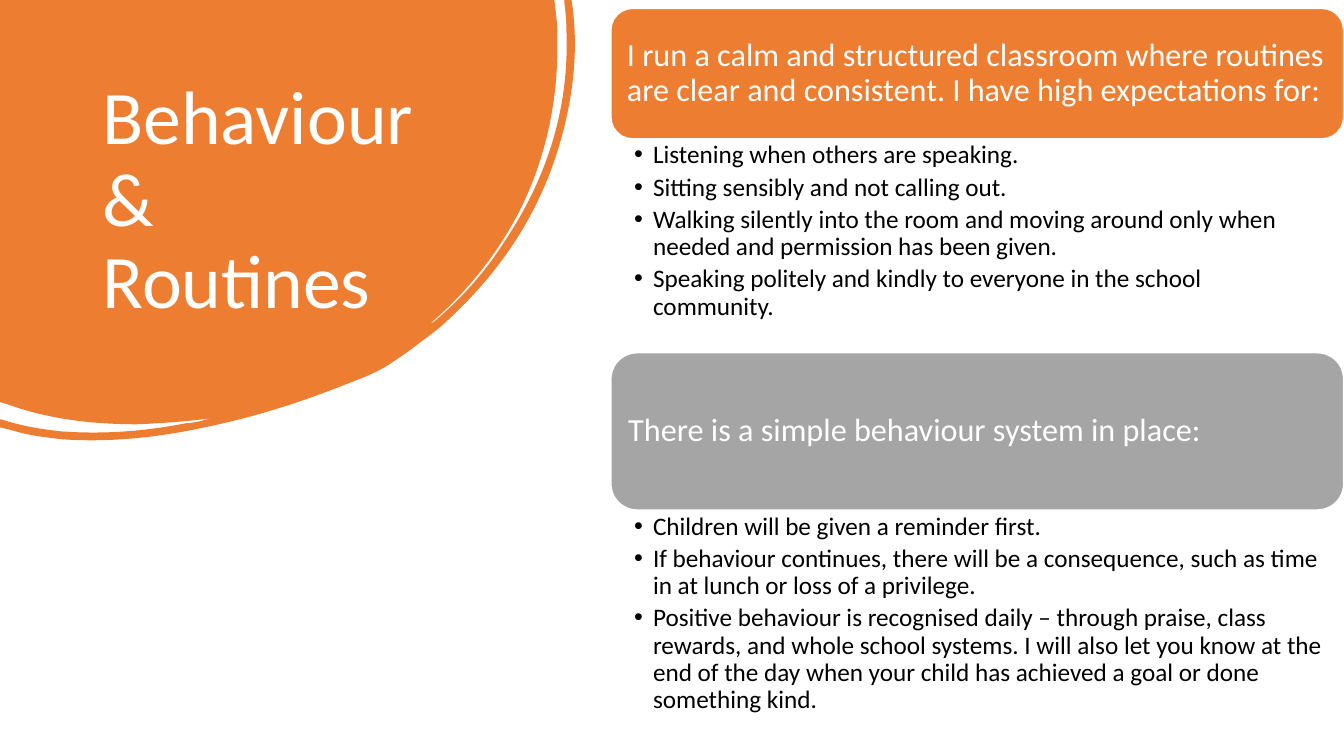
from lxml import etree
from pptx import Presentation, util as u
from pptx.dml.color import RGBColor
from pptx.enum import shapes, text
from pptx.oxml import ns

COLORS = {"orange": "ED7D31", "gray": "A5A5A5", "white": "FFFFFF", "black": "000000"}
FONT = "Calibri"

presentation = Presentation()
presentation.slide_width, presentation.slide_height = u.Pt(960), u.Pt(540)
slide = presentation.slides.add_slide(presentation.slide_layouts[6])


def add_text(box, lines, size, color, insets, anchor, space_after=0):
    left, top, width, height = map(u.Pt, box)
    shape = slide.shapes.add_textbox(left, top, width, height)
    frame = shape.text_frame
    frame.word_wrap = True
    frame.vertical_anchor = anchor
    frame.margin_left, frame.margin_top, frame.margin_right, frame.margin_bottom = map(u.Pt, insets)
    frame.text = "\n".join(lines)
    for paragraph in frame.paragraphs:
        paragraph.line_spacing = 0.9
        paragraph.space_after = u.Pt(space_after)
        font = paragraph.runs[0].font
        font.name, font.size = FONT, u.Pt(size)
        font.color.rgb = RGBColor.from_string(COLORS[color])
    return frame


blob_segments = [
    (396, 0), (397.4, 12.2),
    (398.2, 18.7, 398.2, 25.9, 398.2, 32.4),
    (398.2, 72.7, 390.2, 110.9, 373, 146.9),
    (357.1, 179.3, 334.8, 207.4, 307.4, 231.1),
    (308.9, 231.1, 309.6, 229.7, 311, 229),
    (330.5, 212.4, 347, 193.7, 360.7, 172.1),
    (391, 126.7, 406.8, 77, 404.6, 21.6),
    (404.6, 15.1, 403.9, 8.6, 403.2, 2.2),
    (403.2, 0), (408.2, 0), (409, 5),
    (413.3, 38.9, 409, 73.4, 398.2, 108),
    (383.8, 154.1, 357.8, 193, 322.6, 226.1),
    (316.1, 232.6, 308.9, 238.3, 301.7, 243.4),
    (294.5, 249.1, 287.3, 254.2, 278.6, 259.9),
    (270, 265.7, 259.2, 270, 247.7, 274.3),
    (215.3, 287.3, 181.4, 298.1, 146.2, 305.3),
    (113, 312.5, 79.2, 316.1, 45.4, 313.9),
    (32.4, 312.5, 20.2, 311, 8.6, 307.4),
    (0, 305.3), (0, 299.5), (2.9, 300.2),
    (16.6, 304.6, 30.2, 306.7, 43.9, 308.2),
    (74.2, 310.3, 103, 308.2, 132.5, 302.4),
    (136.1, 302.4, 139, 301.7, 142.6, 301),
    (145.4, 300.2, 148.3, 299.5, 151.2, 298.8),
    (133.9, 301, 115.9, 302.4, 97.9, 303.1),
    (66.2, 303.1, 34.6, 299.5, 5, 288.7),
    (0, 287.3),
]
builder = slide.shapes.build_freeform(0, 0)
builder.add_line_segments([(u.Pt(segment[-2]), u.Pt(segment[-1])) for segment in blob_segments], close=True)
blob = builder.convert_to_shape()
blob.width, blob.height = u.Pt(411), u.Pt(314.6)
outline = blob._element.find(".//" + ns.qn("a:path"))
outline.set("w", str(u.Pt(411)))
outline.set("h", str(u.Pt(314.6)))
for line, segment in zip(outline.findall(ns.qn("a:lnTo")), blob_segments):
    if len(segment) == 6:
        curve = etree.Element(ns.qn("a:cubicBezTo"))
        for x, y in zip(segment[::2], segment[1::2]):
            etree.SubElement(curve, ns.qn("a:pt"), x=str(u.Pt(x)), y=str(u.Pt(y)))
        outline.replace(line, curve)
blob.shadow.inherit = False
blob.fill.solid()
blob.fill.fore_color.rgb = RGBColor.from_string(COLORS["orange"])
blob.line.fill.background()

add_text((66.2, 53.3, 253.4, 159.8), ["Behaviour & Routines"], 54, "white",
         (7.2, 3.6, 14, 3.6), text.MSO_ANCHOR.TOP)

sections = [
    ("orange", 6, 93.2, 4.5, 152.6,
     "I run a calm and structured classroom where routines are clear and consistent. "
     "I have high expectations for:",
     ["Listening when others are speaking.",
      "Sitting sensibly and not calling out.",
      "Walking silently into the room and moving around only when needed and permission has been given.",
      "Speaking politely and kindly to everyone in the school community."]),
    ("gray", 252, 112.3, 5.5, 169.2,
     "There is a simple behaviour system in place:",
     ["Children will be given a reminder first.",
      "If behaviour continues, there will be a consequence, such as time in at lunch or loss of a privilege.",
      "Positive behaviour is recognised daily – through praise, class rewards, and whole school systems. "
      "I will also let you know at the end of the day when your child has achieved a goal or done "
      "something kind."]),
]
left, width = 436.4, 523.4
for color, top, height, pad, list_height, heading, bullets in sections:
    banner = slide.shapes.add_shape(shapes.MSO_SHAPE.ROUNDED_RECTANGLE,
                                    u.Pt(left), u.Pt(top), u.Pt(width), u.Pt(height))
    banner.shadow.inherit = False
    banner.fill.solid()
    banner.fill.fore_color.rgb = RGBColor.from_string(COLORS[color])
    banner.line.color.rgb = RGBColor.from_string(COLORS["white"])
    banner.line.width = u.Pt(1)
    add_text((left + pad, top + pad, width - 2 * pad, height - 2 * pad), [heading], 23, "white",
             (6.9, 6.9, 6.9, 6.9), text.MSO_ANCHOR.MIDDLE, 8)
    frame = add_text((left, top + height, width, list_height), bullets, 18, "black",
                     (16.6, 2.3, 12.8, 2.3), text.MSO_ANCHOR.TOP, 3.6)
    for paragraph in frame.paragraphs:
        paragraph.level = 1
        properties = paragraph._p.get_or_add_pPr()
        properties.set("marL", str(u.Pt(13.5)))
        properties.set("indent", str(u.Pt(-13.5)))
        etree.SubElement(properties, ns.qn("a:buFont"), typeface="Arial")
        etree.SubElement(properties, ns.qn("a:buChar"), char="•")

presentation.save("out.pptx")
